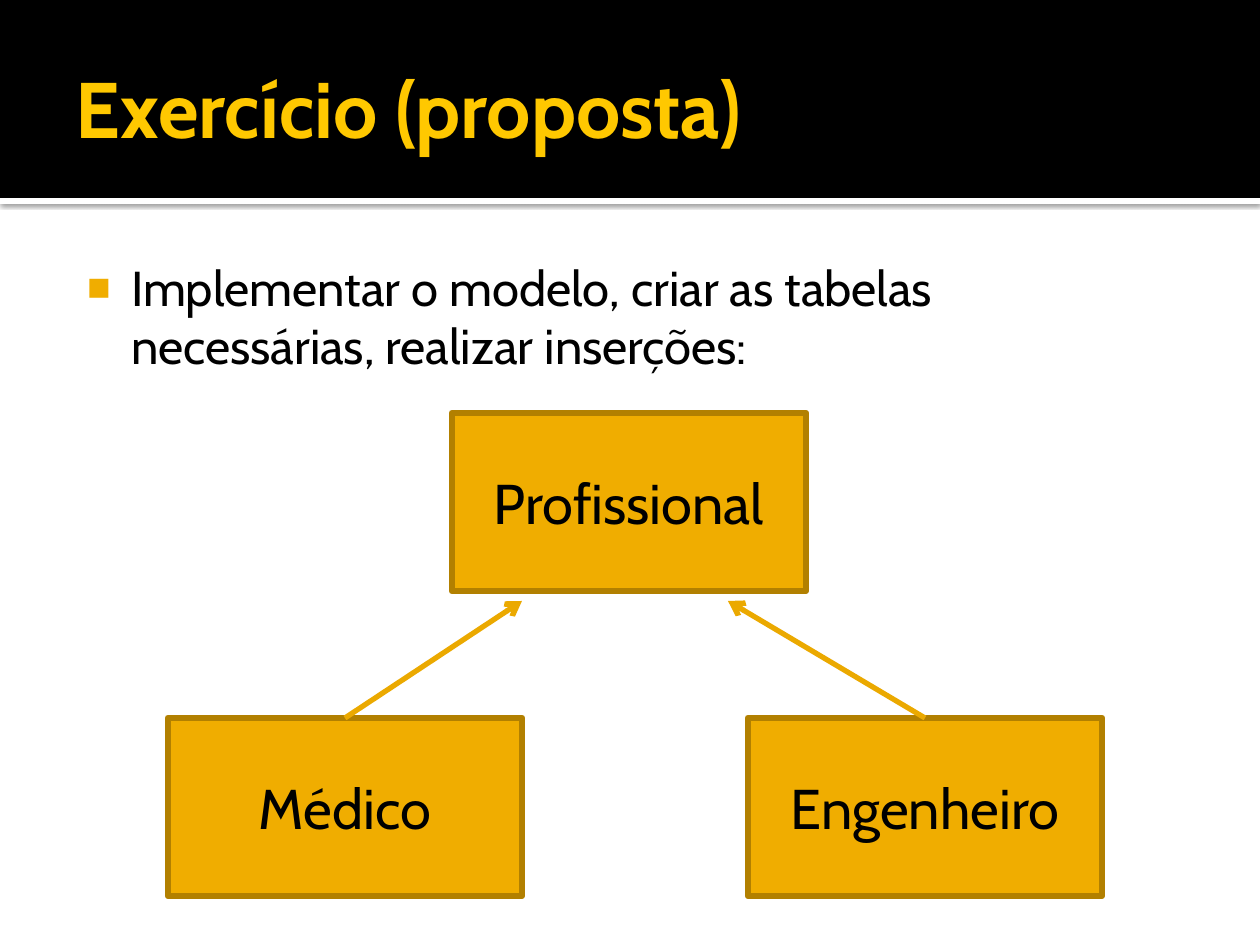
from lxml import etree
from pptx import Presentation
from pptx.dml.color import RGBColor
from pptx.enum.shapes import MSO_CONNECTOR, MSO_SHAPE
from pptx.enum.text import MSO_ANCHOR, MSO_AUTO_SIZE, PP_ALIGN
from pptx.oxml import parse_xml
from pptx.oxml.ns import nsdecls, qn
from pptx.util import Emu, Pt

RECTANGLE = MSO_SHAPE.RECTANGLE
STRAIGHT = MSO_CONNECTOR.STRAIGHT
LEFT, CENTER = PP_ALIGN.LEFT, PP_ALIGN.CENTER
TOP, MIDDLE = MSO_ANCHOR.TOP, MSO_ANCHOR.MIDDLE
NO_AUTOFIT = MSO_AUTO_SIZE.NONE
TOP_SITE = 0
PX_PER_INCH = 126


def px(length):
    return Emu(round(length * 914400 / PX_PER_INCH))


def color(value):
    return RGBColor.from_string(value)


class SlideBuilder:
    font_name = "Cabin"
    black, white = "000000", "FFFFFF"
    title_color = "FFC800"
    accent, accent_dark, arrow_color = "F0AD00", "B28000", "EBA900"

    def __init__(self, slide):
        self.slide = slide

    def style(self, paragraph, size, font_color, alignment=LEFT, bold=False):
        paragraph.alignment = alignment
        font = paragraph.font
        font.name, font.size, font.bold = self.font_name, Pt(size), bold
        font.color.rgb = color(font_color)

    def rectangle(self, left, top, width, height, fill):
        shape = self.slide.shapes.add_shape(
            RECTANGLE, px(left), px(top), px(width), px(height))
        shape.shadow.inherit = False
        shape.fill.solid()
        shape.fill.fore_color.rgb = color(fill)
        shape.line.fill.background()
        return shape

    def drop_shadow(self, shape):
        effects = shape._element.spPr.find(qn("a:effectLst"))
        effects.append(parse_xml(
            f'<a:outerShdw {nsdecls("a")} blurRad="{Pt(2.5)}" dist="{Pt(0.8)}"'
            ' dir="5400000" rotWithShape="0"><a:srgbClr val="000000">'
            '<a:alpha val="60000"/></a:srgbClr></a:outerShdw>'))

    def entity(self, text, left, top, width=354, height=178):
        shape = self.rectangle(left, top, width, height, self.accent)
        shape.line.color.rgb = color(self.accent_dark)
        shape.line.width = Pt(3.78)
        frame = shape.text_frame
        frame.text = text
        frame.vertical_anchor = MIDDLE
        self.style(frame.paragraphs[0], 32, self.black, CENTER)
        return shape

    def arrow(self, child, end_x, end_y):
        connector = self.slide.shapes.add_connector(
            STRAIGHT, 0, 0, px(end_x), px(end_y))
        connector.begin_connect(child, TOP_SITE)
        connector.line.color.rgb = color(self.arrow_color)
        connector.line.width = Pt(3)
        line = connector.line._get_or_add_ln()
        etree.SubElement(line, qn("a:tailEnd"), type="arrow")
        etree.SubElement(connector._element.spPr, qn("a:effectLst"))

    def placeholder(self, shape, text, box, margins, anchor):
        shape.left, shape.top, shape.width, shape.height = map(px, box)
        # Bring the text in front of the header bands
        shape._element.getparent().append(shape._element)
        frame = shape.text_frame
        frame.text = text
        frame.word_wrap = True
        frame.auto_size = NO_AUTOFIT
        frame.vertical_anchor = anchor
        (frame.margin_left, frame.margin_top,
         frame.margin_right, frame.margin_bottom) = map(px, margins)
        paragraph = frame.paragraphs[0]
        paragraph.space_before = Pt(0)
        return paragraph

    def title(self, text):
        paragraph = self.placeholder(
            self.slide.shapes.title, text, (63, 21, 1134, 173), (13, 6, 6, 6), MIDDLE)
        self.style(paragraph, 45, self.title_color, bold=True)

    def body(self, text):
        paragraph = self.placeholder(
            self.slide.placeholders[1], text, (63, 244, 1134, 638), (8, 13, 13, 6), TOP)
        properties = paragraph._p.get_or_add_pPr()
        properties.set("marL", str(px(60)))
        properties.set("indent", str(px(-44)))
        bullet_color = etree.SubElement(properties, qn("a:buClr"))
        etree.SubElement(bullet_color, qn("a:srgbClr"), val=self.accent)
        etree.SubElement(properties, qn("a:buSzPct"), val="80000")
        etree.SubElement(properties, qn("a:buChar"), char="■")
        self.style(paragraph, 28, self.black)


def main():
    presentation = Presentation()
    presentation.slide_width, presentation.slide_height = px(1260), px(945)
    slide = presentation.slides.add_slide(presentation.slide_layouts[1])
    builder = SlideBuilder(slide)

    # Header bands
    strip = builder.rectangle(0, 198, 1260, 6, builder.white)
    builder.drop_shadow(strip)
    builder.rectangle(0, 0, 1260, 198, builder.black)

    # Title and task
    builder.title("Exercício (proposta)")
    builder.body("Implementar o modelo, criar as tabelas necessárias, "
                 "realizar inserções:")

    # Inheritance diagram: the arrows stop just below the parent
    builder.entity("Profissional", 452, 413)
    for name, left, arrow_end in (("Médico", 168, 522), ("Engenheiro", 748, 728)):
        child = builder.entity(name, left, 718)
        builder.arrow(child, arrow_end, 601)

    presentation.save("out.pptx")


if __name__ == "__main__":
    main()
